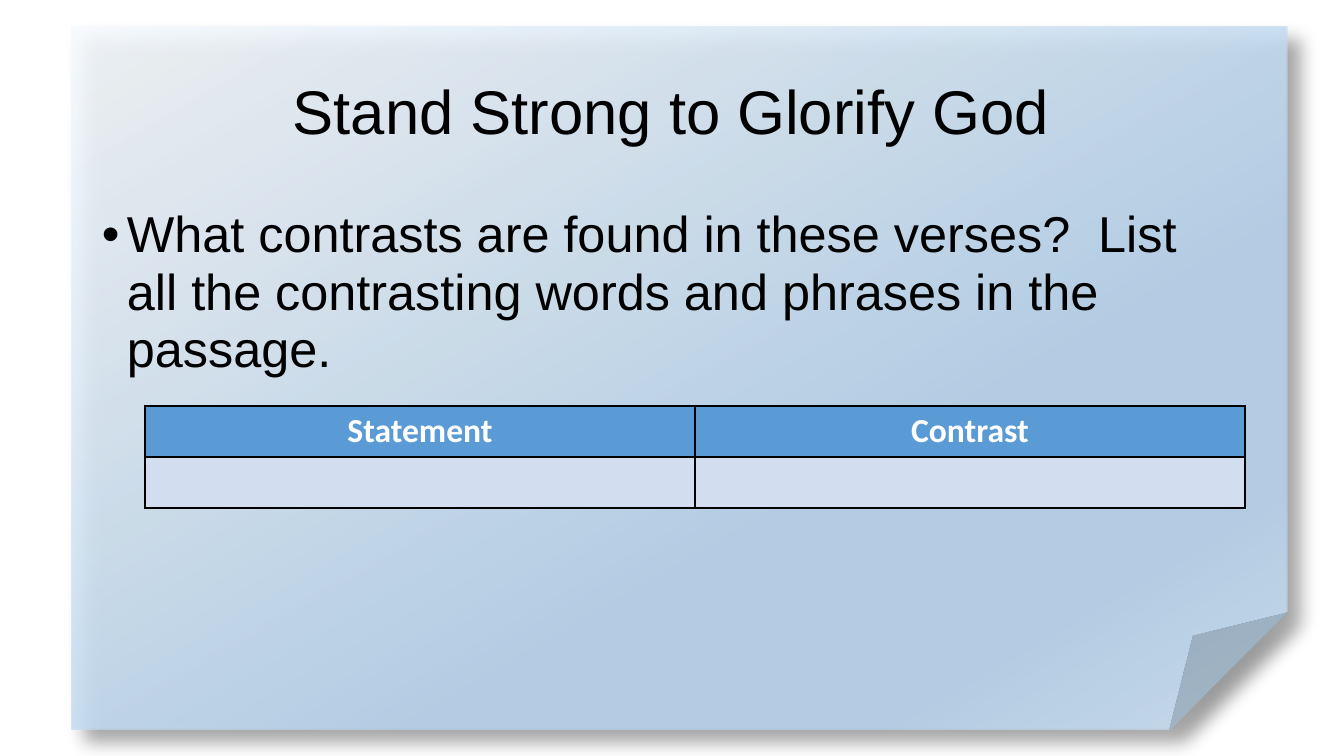
from dataclasses import dataclass

from lxml.etree import SubElement
from pptx import Presentation
from pptx.dml.color import RGBColor
from pptx.enum.shapes import MSO_SHAPE
from pptx.enum.text import MSO_ANCHOR, PP_ALIGN
from pptx.oxml.ns import qn
from pptx.slide import Slide
from pptx.table import _Cell
from pptx.text.text import TextFrame
from pptx.util import Emu, Pt

BLACK = RGBColor(0x00, 0x00, 0x00)
WHITE = RGBColor(0xFF, 0xFF, 0xFF)
PALE_BLUE = RGBColor(0xF7, 0xFA, 0xFD)
SKY_BLUE = RGBColor(0xB5, 0xD2, 0xEC)
LIGHT_BLUE = RGBColor(0xCE, 0xE1, 0xF2)
HEADER_BLUE = RGBColor(0x5B, 0x9B, 0xD5)
ROW_BLUE = RGBColor(0xD2, 0xDE, 0xEF)


def px(length: int) -> Emu:
    """Convert whole pixels, 100.8 to the inch, into EMU."""
    return Emu(round(length * 914400 / 100.8))


@dataclass(frozen=True)
class Box:
    """Place and size in pixels."""
    left: int
    top: int
    width: int
    height: int

    def emu(self) -> tuple[Emu, Emu, Emu, Emu]:
        """Return the four lengths in EMU."""
        return px(self.left), px(self.top), px(self.width), px(self.height)


@dataclass(frozen=True)
class Stop:
    """One colour of the paper gradient, at a percentage of its run."""
    position: int
    color: RGBColor


@dataclass(frozen=True)
class Row:
    """One table row with its cell fill."""
    texts: tuple[str, str]
    fill: RGBColor


PAPER_STOPS = (Stop(0, PALE_BLUE), Stop(64, SKY_BLUE), Stop(83, SKY_BLUE), Stop(100, LIGHT_BLUE))
CONTRAST_ROWS = (Row(("Statement", "Contrast"), HEADER_BLUE), Row(("", ""), ROW_BLUE))
COLUMN_WIDTH = 550
ROW_HEIGHT = 51


def add_color(parent, color: RGBColor, opacity: int) -> None:
    """Append a colour with an opacity in percent."""
    tint = SubElement(parent, qn("a:srgbClr"), val=str(color))
    SubElement(tint, qn("a:alpha"), val=str(opacity * 1000))


def write_text(frame: TextFrame, text: str, *, size: int, font: str = "Arial",
               color: RGBColor = BLACK, bold: bool = False,
               align: PP_ALIGN = PP_ALIGN.LEFT, spacing: float = 1.0,
               bullet: str = "", indent: int = 0) -> None:
    """Write one formatted paragraph into a text frame."""
    frame.word_wrap = True
    paragraph = frame.paragraphs[0]
    if bullet:
        properties = paragraph._p.get_or_add_pPr()
        properties.set("marL", str(px(indent)))
        properties.set("indent", str(-px(indent)))
        SubElement(properties, qn("a:buFont"), typeface=font)
        SubElement(properties, qn("a:buChar"), char=bullet)
    paragraph.alignment = align
    paragraph.line_spacing = spacing
    run = paragraph.add_run()
    run.text = text
    run.font.size = Pt(size)
    run.font.name = font
    run.font.bold = bold
    run.font.color.rgb = color


def add_paper(slide: Slide, box: Box) -> None:
    """Draw the translucent sheet with a folded corner and a shadow."""
    paper = slide.shapes.add_shape(MSO_SHAPE.FOLDED_CORNER, *box.emu())
    paper.line.fill.background()
    paper.fill.gradient()
    paper.fill.gradient_angle = 300
    properties = paper._element.spPr
    stops = properties.find(qn("a:gradFill")).find(qn("a:gsLst"))
    stops.clear()
    for stop in PAPER_STOPS:
        mark = SubElement(stops, qn("a:gs"), pos=str(stop.position * 1000))
        add_color(mark, stop.color, 87)
    paper.shadow.inherit = False
    shadow = SubElement(properties.find(qn("a:effectLst")), qn("a:outerShdw"),
                        blurRad=str(Pt(13)), dist=str(Pt(13)), dir="2700000",
                        algn="tl", rotWithShape="0")
    add_color(shadow, BLACK, 40)


def add_borders(cell: _Cell) -> None:
    """Outline a cell on all four sides."""
    properties = cell._tc.get_or_add_tcPr()
    for index, side in enumerate(("lnL", "lnR", "lnT", "lnB")):
        border = properties.makeelement(qn(f"a:{side}"), {"w": str(Pt(1))})
        add_color(SubElement(border, qn("a:solidFill")), BLACK, 100)
        properties.insert(index, border)


def add_contrast_table(slide: Slide, left: int, top: int) -> None:
    """Draw the table of statements and contrasts."""
    columns = len(CONTRAST_ROWS[0].texts)
    box = Box(left, top, columns * COLUMN_WIDTH, len(CONTRAST_ROWS) * ROW_HEIGHT)
    table = slide.shapes.add_table(len(CONTRAST_ROWS), columns, *box.emu()).table
    for row_index, row in enumerate(CONTRAST_ROWS):
        for column_index, text in enumerate(row.texts):
            cell = table.cell(row_index, column_index)
            cell.fill.solid()
            cell.fill.fore_color.rgb = row.fill
            add_borders(cell)
            if text:
                write_text(cell.text_frame, text, size=24, font="Calibri", color=WHITE,
                           bold=True, align=PP_ALIGN.CENTER)


def main() -> None:
    """Build the slide and save it."""
    deck = Presentation()
    deck.slide_width, deck.slide_height = px(1344), px(756)
    slide = deck.slides.add_slide(deck.slide_layouts[6])
    add_paper(slide, Box(72, 27, 1215, 703))
    title = slide.shapes.add_textbox(*Box(92, 40, 1159, 146).emu()).text_frame
    title.vertical_anchor = MSO_ANCHOR.MIDDLE
    write_text(title, "Stand Strong to Glorify God", size=44,
               align=PP_ALIGN.CENTER, spacing=0.95)
    question = slide.shapes.add_textbox(*Box(92, 202, 1159, 480).emu()).text_frame
    write_text(question, "What contrasts are found in these verses?  List all the "
               "contrasting words and phrases in the passage.",
               size=36, spacing=0.95, bullet="•", indent=25)
    add_contrast_table(slide, 145, 406)
    deck.save("out.pptx")


if __name__ == "__main__":
    main()
